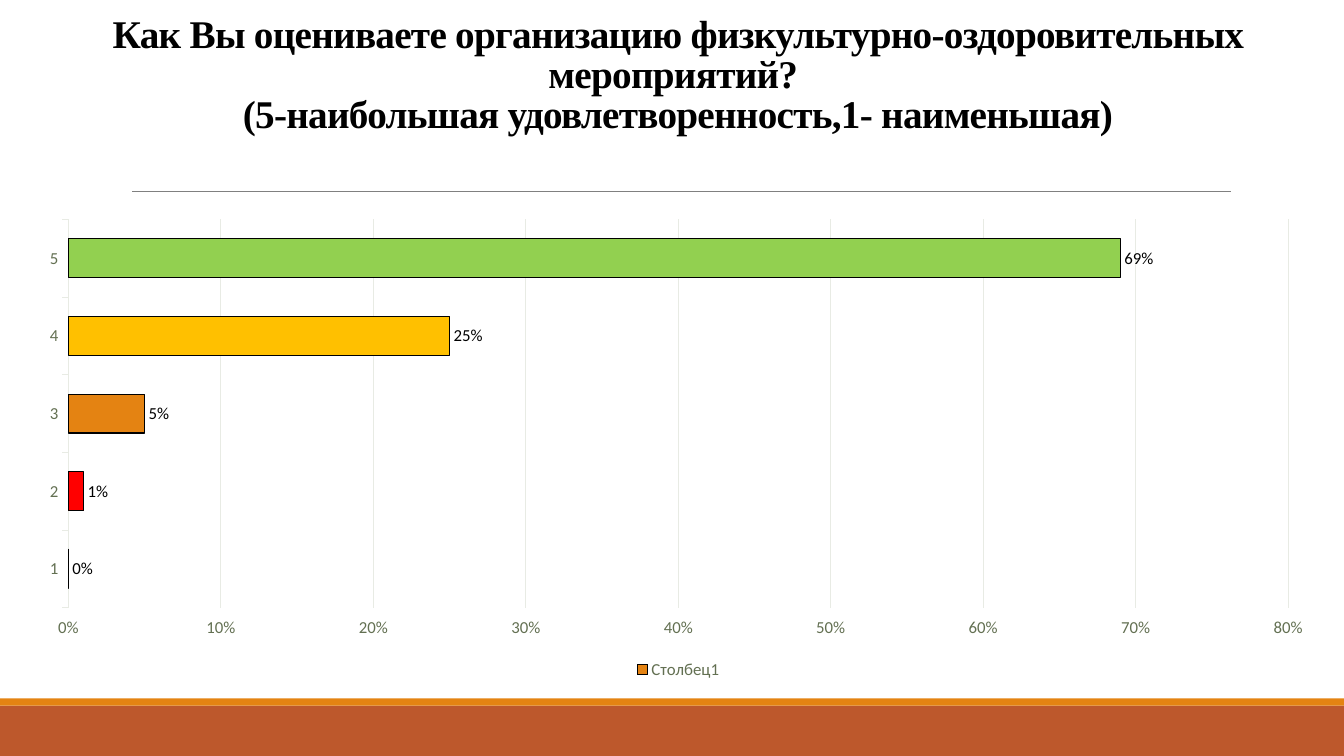
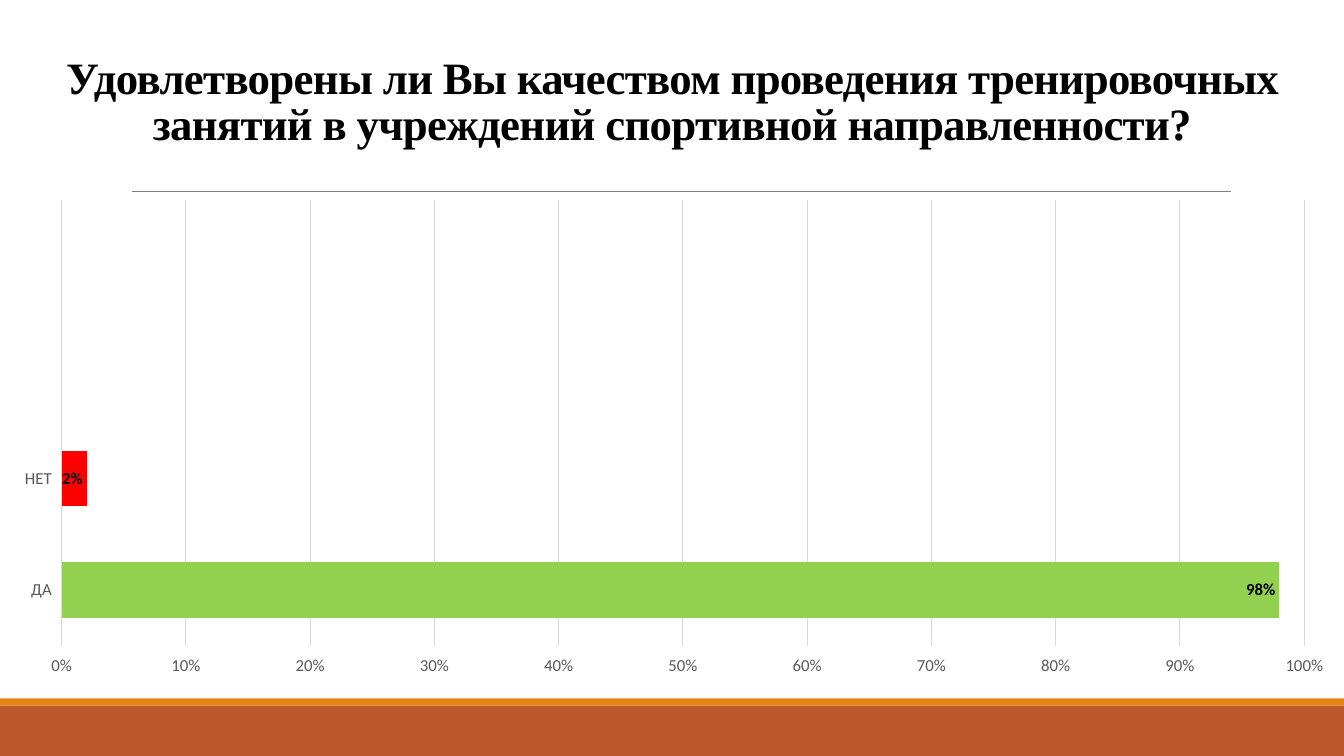
"""Two survey slides: a title over a horizontal bar chart."""
from dataclasses import dataclass

from lxml import etree
from pptx import Presentation
from pptx.chart.data import CategoryChartData
from pptx.dml.color import RGBColor
from pptx.enum.chart import XL_CHART_TYPE, XL_LABEL_POSITION, XL_LEGEND_POSITION, XL_TICK_MARK
from pptx.enum.shapes import MSO_CONNECTOR, MSO_SHAPE
from pptx.enum.text import MSO_ANCHOR, PP_ALIGN
from pptx.oxml.ns import qn
from pptx.util import Pt

BAR = XL_CHART_TYPE.BAR_CLUSTERED
OUT_END = XL_LABEL_POSITION.OUTSIDE_END
IN_END = XL_LABEL_POSITION.INSIDE_END
BOTTOM = XL_LEGEND_POSITION.BOTTOM
TICK_OUT = XL_TICK_MARK.OUTSIDE
TICK_NONE = XL_TICK_MARK.NONE
STRAIGHT = MSO_CONNECTOR.STRAIGHT
RECT = MSO_SHAPE.RECTANGLE
LOW = MSO_ANCHOR.BOTTOM
CENTER = PP_ALIGN.CENTER

SCALE = 9525
WIDE, HIGH = 1280, 720
TITLE_ONLY = 5


@dataclass(frozen=True)
class Theme:
    """Colours, fonts and type sizes."""
    band: str = "BD582C"
    strip: str = "E48312"
    rule: str = "808080"
    ink: str = "000000"
    olive: str = "637052"
    pale: str = "E8EBE4"
    gray: str = "595959"
    grid: str = "D9D9D9"
    red: str = "FF0000"
    gold: str = "FFC000"
    green: str = "92D050"
    head: str = "Times New Roman"
    body: str = "Calibri"
    small: int = 12
    mid: int = 28
    big: int = 32
    thin: float = 0.5
    line: float = 0.75


T = Theme()


def px(*vals):
    """Turn px lengths into EMU."""
    return [v * SCALE for v in vals]


def rgb(code):
    """Turn a hex code into a colour."""
    return RGBColor.from_string(code)


def style(font, size=T.small, color=T.ink, face=T.body, bold=False):
    """Format a font."""
    font.size, font.name, font.bold = Pt(size), face, bold
    font.color.rgb = rgb(color)


def stroke(line, color=None, width=T.line):
    """Colour a line, or hide it when there is no colour."""
    if color is None:
        line.fill.background()
        return
    line.color.rgb = rgb(color)
    line.width = Pt(width)


def paint(form, color):
    """Give a solid fill."""
    form.fill.solid()
    form.fill.fore_color.rgb = rgb(color)


def write(frame, text, align=CENTER, anchor=LOW, space=0.85, track=-50, **look):
    """Fill a frame with formatted text."""
    frame.word_wrap = True
    frame.vertical_anchor = anchor
    frame.text = text
    for para in frame.paragraphs:
        para.alignment, para.line_spacing = align, space
        for run in para.runs:
            style(run.font, **look)
            run.font.element.set("spc", str(track)) if hasattr(run.font, "element") else \
                run._r.get_or_add_rPr().set("spc", str(track))


def block(slide, box, color):
    """Add a plain rectangle."""
    shape = slide.shapes.add_shape(RECT, *px(*box))
    shape.shadow.inherit = False
    paint(shape, color)
    stroke(shape.line)
    return shape


def rule(slide, ends):
    """Add a thin line."""
    line = slide.shapes.add_connector(STRAIGHT, *px(*ends))
    stroke(line.line, T.rule, T.thin)
    etree.SubElement(line.element.spPr, qn("a:effectLst"))
    return line


def share(slide):
    """Place the bands and the rule on the layout of a slide."""
    tree = slide.slide_layout.shapes.element
    for part in (block(slide, (0, 672, WIDE, 48), T.band),
                 block(slide, (0, 665, WIDE, 7), T.strip),
                 rule(slide, (126, 182, 1172, 182))):
        tree.append(part.element)


def head(slide, text, box, size):
    """Move and fill the title."""
    title = slide.shapes.title
    title.left, title.top, title.width, title.height = px(*box)
    write(title.text_frame, text, size=size, face=T.head, bold=True)


def place(chart, area):
    """Fix the inner plot area as shares of the chart."""
    plot = chart.element.find(".//" + qn("c:plotArea"))
    for old in plot.findall(qn("c:layout")):
        plot.remove(old)
    layout = etree.Element(qn("c:layout"))
    manual = etree.SubElement(layout, qn("c:manualLayout"))
    tags = ("layoutTarget", "xMode", "yMode", "x", "y", "w", "h")
    for tag, val in zip(tags, ("inner", "edge", "edge", *area)):
        etree.SubElement(manual, qn("c:" + tag)).set("val", str(val))
    plot.insert(0, layout)


def axes(chart, top, text, grid, edge):
    """Format both axes."""
    cat, val = chart.category_axis, chart.value_axis
    for axis in (cat, val):
        style(axis.tick_labels.font, color=text)
        axis.minor_tick_mark = TICK_NONE
        axis.major_tick_mark = TICK_OUT
    stroke(cat.format.line, edge)
    stroke(val.format.line)
    val.minimum_scale, val.maximum_scale, val.major_unit = 0, top, 0.1
    val.has_major_gridlines = True
    stroke(val.major_gridlines.format.line, grid)
    val.tick_labels.number_format = "0%"
    val.tick_labels.number_format_is_linked = False


def bars(slide, box, name, rows, area, top, text, grid, edge=None,
         rim=None, pos=OUT_END, bold=False, lap=0, legend=False):
    """Add a bar chart from rows of label, value and colour."""
    data = CategoryChartData(number_format="0%")
    data.categories = [row[0] for row in rows]
    data.add_series(name, [row[1] for row in rows])
    chart = slide.shapes.add_chart(BAR, *px(*box), data).chart
    style(chart.font)
    chart.has_title = False
    chart.has_legend = legend
    if legend:
        chart.legend.position = BOTTOM
        chart.legend.include_in_layout = False
        style(chart.legend.font, color=text)
    place(chart, area)
    axes(chart, top, text, grid, edge)
    plot = chart.plots[0]
    plot.vary_by_categories = False
    plot.gap_width, plot.overlap = 100, lap
    series = plot.series[0]
    looks = [(series.format, T.strip)]
    looks += [(series.points[i].format, row[2]) for i, row in enumerate(rows)]
    for form, color in looks:
        paint(form, color)
        stroke(form.line, rim)
    plot.has_data_labels = True
    tags = plot.data_labels
    tags.show_value, tags.position = True, pos
    tags.number_format, tags.number_format_is_linked = "0%", False
    style(tags.font, bold=bold)


def main():
    """Build and save the slides."""
    deck = Presentation()
    deck.slide_width, deck.slide_height = px(WIDE, HIGH)
    layout = deck.slide_layouts[TITLE_ONLY]
    rate, yes = [deck.slides.add_slide(layout) for _ in range(2)]
    share(rate)

    head(rate, "Как Вы оцениваете организацию физкультурно-оздоровительных мероприятий? \v"
         "(5-наибольшая удовлетворенность,1- наименьшая)", (11, 0, 1269, 135), T.mid)
    marks = [("1", 0, T.strip), ("2", 0.01, T.red), ("3", 0.05, T.strip),
             ("4", 0.25, T.gold), ("5", 0.69, T.green)]
    bars(rate, (28, 200, 1236, 451), "Столбец1", marks, (0.03, 0.02, 0.94, 0.82), 0.8,
         T.olive, T.pale, edge=T.pale, rim=T.ink, legend=True)

    head(yes, "Удовлетворены ли Вы качеством проведения тренировочных занятий "
         "в учреждений спортивной направленности?", (0, 0, WIDE, 147), T.big)
    votes = [("ДА", 0.98, T.green), ("НЕТ", 0.02, T.red),
             ("", None, T.strip), ("", None, T.strip)]
    bars(yes, (21, 181, 1259, 477), "Series 1", votes, (0.03, 0.02, 0.94, 0.89), 1,
         T.gray, T.grid, pos=IN_END, bold=True, lap=-20)

    deck.save("out.pptx")


if __name__ == "__main__":
    main()
